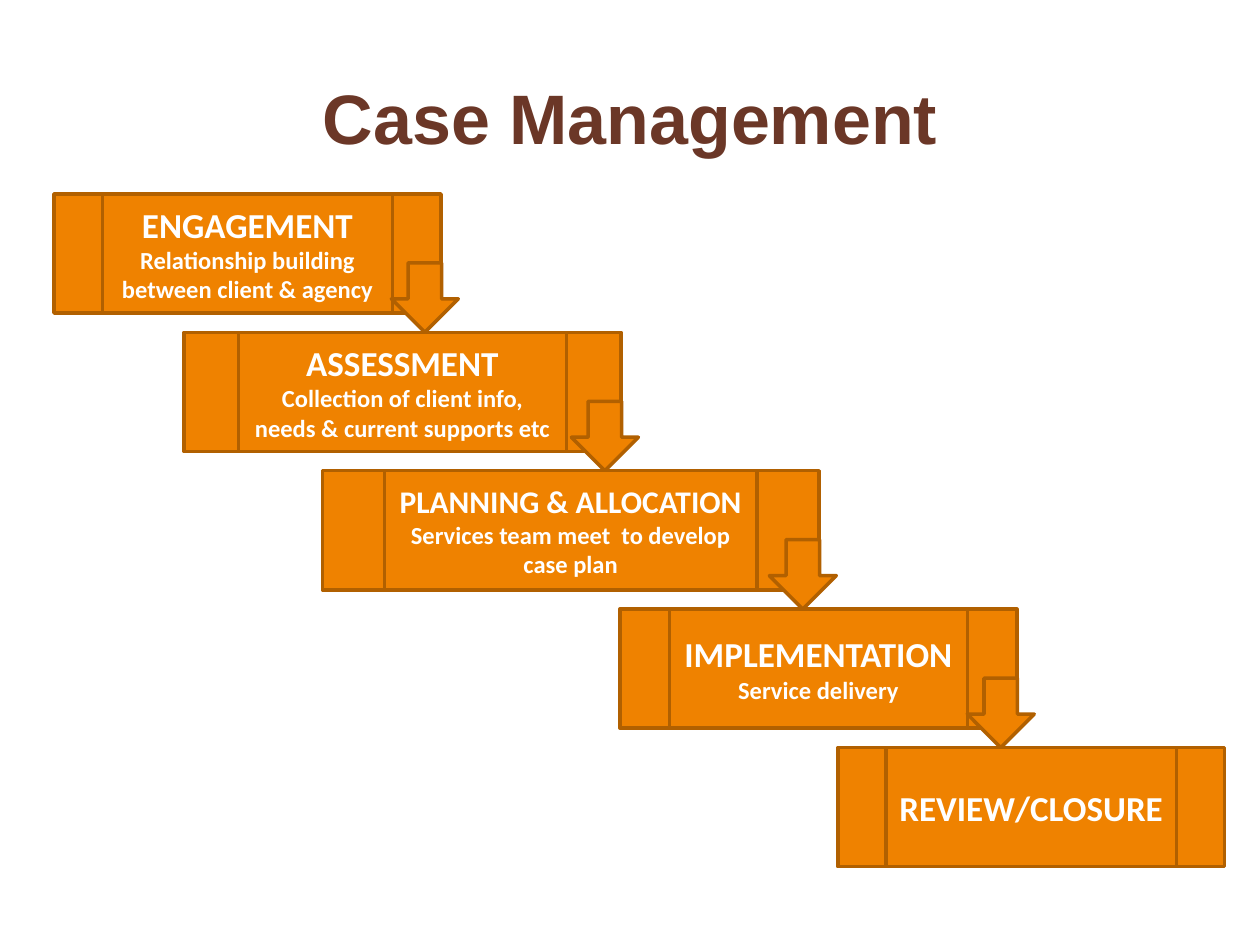
from pptx import Presentation
from pptx import util as u
from pptx.dml import color
from pptx.enum import shapes, text

COLOURS = {"title": "6B3727", "fill": "EF8200", "line": "B16000", "label": "FFFFFF"}
TITLE_FORMAT = {"name": "Arial", "size": u.Pt(40), "bold": True}
STEP_TOP, STEP_HEIGHT, STEP_PITCH = 3.91, 2.4, 2.79
ARROW_WIDTH, ARROW_HEIGHT, ARROW_INSET = 1.35, 1.4, 1.0
STEPS = [
    (1.09, 7.8, "ENGAGEMENT", 20, "Relationship building between client & agency"),
    (3.71, 8.81, "ASSESSMENT", 20, "Collection of client info, needs & current supports etc"),
    (6.5, 10.01, "PLANNING & ALLOCATION", 18, "Services team meet  to develop case plan"),
    (12.5, 8.0, "IMPLEMENTATION", 20, "Service delivery"),
    (16.89, 7.8, "REVIEW/CLOSURE", 20, ""),
]


def rgb(name):
    return color.RGBColor.from_string(COLOURS[name])


def add_span(para, wording, formats, colour):
    para.alignment = text.PP_ALIGN.CENTER
    span = para.add_run()
    span.text = wording
    for name, value in formats.items():
        setattr(span.font, name, value)
    span.font.color.rgb = rgb(colour)


def prepare_frame(frame):
    frame.word_wrap = True
    frame.vertical_anchor = text.MSO_ANCHOR.MIDDLE


def add_title(page, box):
    frame = page.shapes.add_textbox(*map(u.Cm, box)).text_frame
    prepare_frame(frame)
    add_span(frame.paragraphs[0], "Case Management", TITLE_FORMAT, "title")


def add_block(page, kind, box):
    shape = page.shapes.add_shape(kind, *map(u.Cm, box))
    shape.shadow.inherit = False
    shape.fill.solid()
    shape.fill.fore_color.rgb = rgb("fill")
    shape.line.color.rgb = rgb("line")
    shape.line.width = u.Pt(2)
    return shape


def add_step(page, box, heading, heading_size, detail):
    shape = add_block(page, shapes.MSO_SHAPE.FLOWCHART_PREDEFINED_PROCESS, box)
    frame = shape.text_frame
    prepare_frame(frame)
    formats = {"name": "Calibri", "size": u.Pt(heading_size), "bold": True}
    add_span(frame.paragraphs[0], heading, formats, "label")
    if detail:
        add_span(frame.add_paragraph(), detail, formats | {"size": u.Pt(14)}, "label")


def add_arrow(page, step_box):
    left, top, width, _ = step_box
    box = (left + width - ARROW_INSET, top + STEP_PITCH - ARROW_HEIGHT,
           ARROW_WIDTH, ARROW_HEIGHT)
    add_block(page, shapes.MSO_SHAPE.DOWN_ARROW, box)


def add_staircase(page, top):
    boxes = [(left, top + index * STEP_PITCH, width, STEP_HEIGHT)
             for index, (left, width, *_) in enumerate(STEPS)]
    for box, (_, _, *wording) in zip(boxes, STEPS):
        add_step(page, box, *wording)
    for box in boxes[:-1]:
        add_arrow(page, box)


def main():
    deck = Presentation()
    deck.slide_width, deck.slide_height = u.Cm(25.4), u.Cm(19.05)
    page = deck.slides.add_slide(deck.slide_layouts[6])
    add_title(page, (1.27, 0.76, 22.86, 3.18))
    add_staircase(page, STEP_TOP)
    deck.save("out.pptx")


if __name__ == "__main__":
    main()
